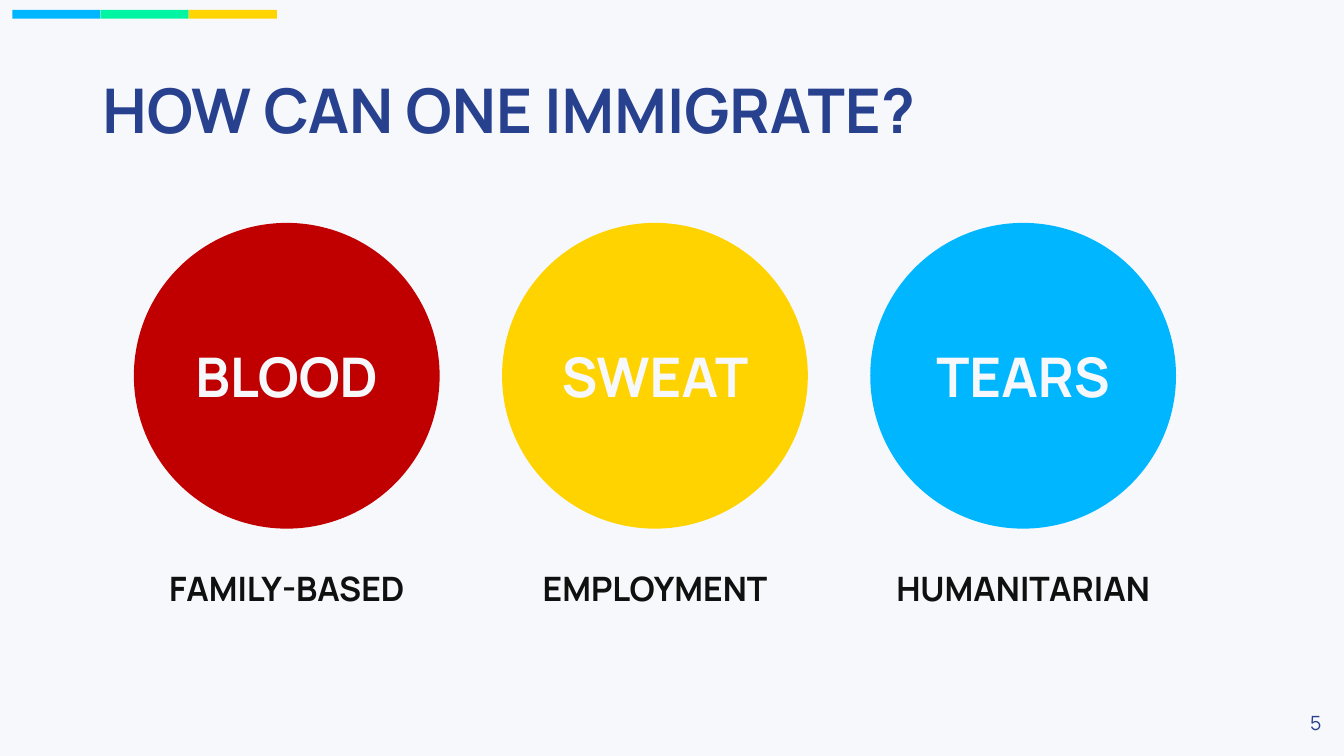
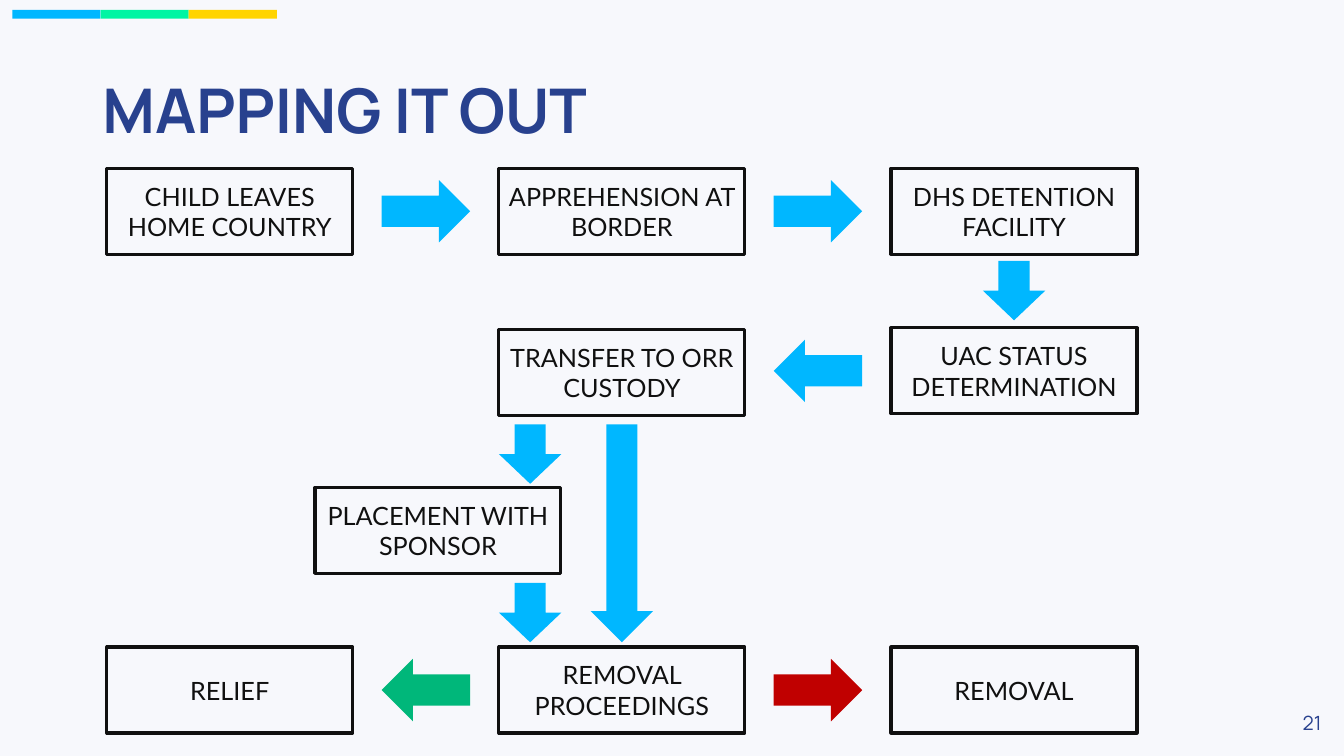
from dataclasses import dataclass

from pptx import Presentation
from pptx.dml.color import RGBColor
from pptx.enum.shapes import MSO_SHAPE
from pptx.enum.text import MSO_ANCHOR, PP_ALIGN
from pptx.util import Pt

RECTANGLE, CIRCLE = MSO_SHAPE.RECTANGLE, MSO_SHAPE.OVAL
RIGHT_ARROW, LEFT_ARROW = MSO_SHAPE.RIGHT_ARROW, MSO_SHAPE.LEFT_ARROW
DOWN_ARROW = MSO_SHAPE.DOWN_ARROW
TOP, MIDDLE = MSO_ANCHOR.TOP, MSO_ANCHOR.MIDDLE
ALIGN_LEFT, ALIGN_CENTER, ALIGN_RIGHT = PP_ALIGN.LEFT, PP_ALIGN.CENTER, PP_ALIGN.RIGHT
TITLE_ONLY = 5


@dataclass(frozen=True)
class Theme:
    background: str = "F7F8FC"
    navy: str = "28418E"
    ink: str = "101010"
    sky: str = "00B7FF"
    mint: str = "00F5A3"
    yellow: str = "FFD400"
    gold: str = "FFD300"
    red: str = "C00000"
    green: str = "00B77A"
    heading_font: str = "Manrope"
    body_font: str = "Lato"
    title_size: float = 44
    circle_size: float = 39
    label_size: float = 24
    step_size: float = 18
    number_size: float = 14
    outline: float = 2.25


THEME = Theme()

# Flowchart grid
STEP_WIDTH, STEP_HEIGHT = 175.7, 61.4
COLUMNS = [76.3 + 280.1 * i for i in range(3)]
ROWS = [120.2 + 114 * i for i in range(4)]
ARROW_LENGTH, ARROW_BREADTH, DROP_LENGTH = 63.2, 44.6, 42.4


def rgb(color):
    return RGBColor.from_string(color)


def write(shape, text, size, color, font=THEME.heading_font, bold=False,
          align=ALIGN_CENTER, anchor=MIDDLE, inset=3.6):
    frame = shape.text_frame
    frame.text = text
    frame.word_wrap = True
    frame.vertical_anchor = anchor
    frame.margin_left = frame.margin_right = Pt(7.2)
    frame.margin_top = frame.margin_bottom = Pt(inset)
    for paragraph in frame.paragraphs:
        paragraph.alignment = align
        for run in paragraph.runs:
            run.font.name = font
            run.font.size = Pt(size)
            run.font.bold = bold
            run.font.color.rgb = rgb(color)


def add_filled(slide, kind, left, top, width, height, color):
    shape = slide.shapes.add_shape(kind, Pt(left), Pt(top), Pt(width), Pt(height))
    shape.shadow.inherit = False
    shape.fill.solid()
    shape.fill.fore_color.rgb = rgb(color)
    shape.line.fill.background()
    return shape


def add_label(slide, text, left, top, width, height, size, color, **style):
    label = slide.shapes.add_textbox(Pt(left), Pt(top), Pt(width), Pt(height))
    write(label, text, size, color, anchor=TOP, **style)


def add_titled_slide(prs, title, number):
    """Add a slide with the shared stripe, title and page number."""
    slide = prs.slides.add_slide(prs.slide_layouts[TITLE_ONLY])
    for i, color in enumerate((THEME.sky, THEME.mint, THEME.yellow)):
        add_filled(slide, RECTANGLE, 8.8 + 63 * i, 7.1, 63, 6.2, color)
    heading = slide.shapes.title
    heading.left, heading.top = Pt(66), Pt(28.8)
    heading.width, heading.height = Pt(828), Pt(104.4)
    write(heading, title, THEME.title_size, THEME.navy, bold=True, align=ALIGN_LEFT)
    heading.text_frame.paragraphs[0].line_spacing = 0.9
    add_label(slide, str(number), 910, 504, 41, 24.2, THEME.number_size,
              THEME.navy, align=ALIGN_RIGHT)
    return slide


def add_pathway(slide, left, word, basis, color):
    """Add a circle with its caption below."""
    diameter = 218.4
    circle = add_filled(slide, CIRCLE, left, 159.2, diameter, diameter, color)
    write(circle, word, THEME.circle_size, THEME.background, bold=True)
    add_label(slide, basis, left, 401.8, diameter, 36, THEME.label_size,
              THEME.ink, bold=True)


def add_step(slide, text, left, top):
    step = slide.shapes.add_shape(RECTANGLE, Pt(left), Pt(top),
                                  Pt(STEP_WIDTH), Pt(STEP_HEIGHT))
    step.shadow.inherit = False
    step.fill.background()
    step.line.color.rgb = rgb(THEME.ink)
    step.line.width = Pt(THEME.outline)
    write(step, text, THEME.step_size, THEME.ink, font=THEME.body_font, inset=7.2)


def add_across_arrow(slide, kind, gap, row, color=THEME.sky):
    """Centre a horizontal arrow in the gap to the right of a column."""
    gap_width = COLUMNS[1] - COLUMNS[0] - STEP_WIDTH
    left = COLUMNS[gap] + STEP_WIDTH + (gap_width - ARROW_LENGTH) / 2
    top = ROWS[row] + (STEP_HEIGHT - ARROW_BREADTH) / 2
    add_filled(slide, kind, left, top, ARROW_LENGTH, ARROW_BREADTH, color)


def add_down_arrow(slide, left, top, length=DROP_LENGTH):
    add_filled(slide, DOWN_ARROW, left, top, ARROW_BREADTH, length, THEME.sky)


def build_pathways(prs):
    slide = add_titled_slide(prs, "HOW CAN ONE IMMIGRATE?", 5)
    pathways = [
        ("BLOOD", "FAMILY-BASED", THEME.red),
        ("SWEAT", "EMPLOYMENT", THEME.gold),
        ("TEARS", "HUMANITARIAN", THEME.sky),
    ]
    for i, (word, basis, color) in enumerate(pathways):
        add_pathway(slide, 95.6 + 263 * i, word, basis, color)


def build_process_map(prs):
    slide = add_titled_slide(prs, "MAPPING IT OUT", 21)
    first, second, third = COLUMNS
    steps = [
        ("CHILD LEAVES\nHOME COUNTRY", first, ROWS[0]),
        ("APPREHENSION AT BORDER", second, ROWS[0]),
        ("DHS DETENTION FACILITY", third, ROWS[0]),
        ("UAC STATUS DETERMINATION", third, ROWS[1]),
        ("TRANSFER TO ORR CUSTODY", second, ROWS[1] + 1),
        ("PLACEMENT WITH SPONSOR", 225, ROWS[2]),
        ("REMOVAL PROCEEDINGS", second, ROWS[3]),
        ("REMOVAL", third, ROWS[3]),
        ("RELIEF", first, ROWS[3]),
    ]
    for step in steps:
        add_step(slide, *step)

    add_across_arrow(slide, RIGHT_ARROW, 0, 0)
    add_across_arrow(slide, RIGHT_ARROW, 1, 0)
    add_across_arrow(slide, LEFT_ARROW, 1, 1)
    add_across_arrow(slide, LEFT_ARROW, 0, 3, THEME.green)
    add_across_arrow(slide, RIGHT_ARROW, 1, 3, THEME.red)

    add_down_arrow(slide, third + (STEP_WIDTH - ARROW_BREADTH) / 2, 186.4)
    add_down_arrow(slide, second, 303.2)
    add_down_arrow(slide, second, 416.4)
    add_down_arrow(slide, second + (STEP_WIDTH - ARROW_BREADTH) / 2, 303.2, 155.6)


def main():
    prs = Presentation()
    prs.slide_width, prs.slide_height = Pt(960), Pt(540)
    backdrop = prs.slide_master.background.fill
    backdrop.solid()
    backdrop.fore_color.rgb = rgb(THEME.background)
    build_pathways(prs)
    build_process_map(prs)
    prs.save("out.pptx")


if __name__ == "__main__":
    main()
